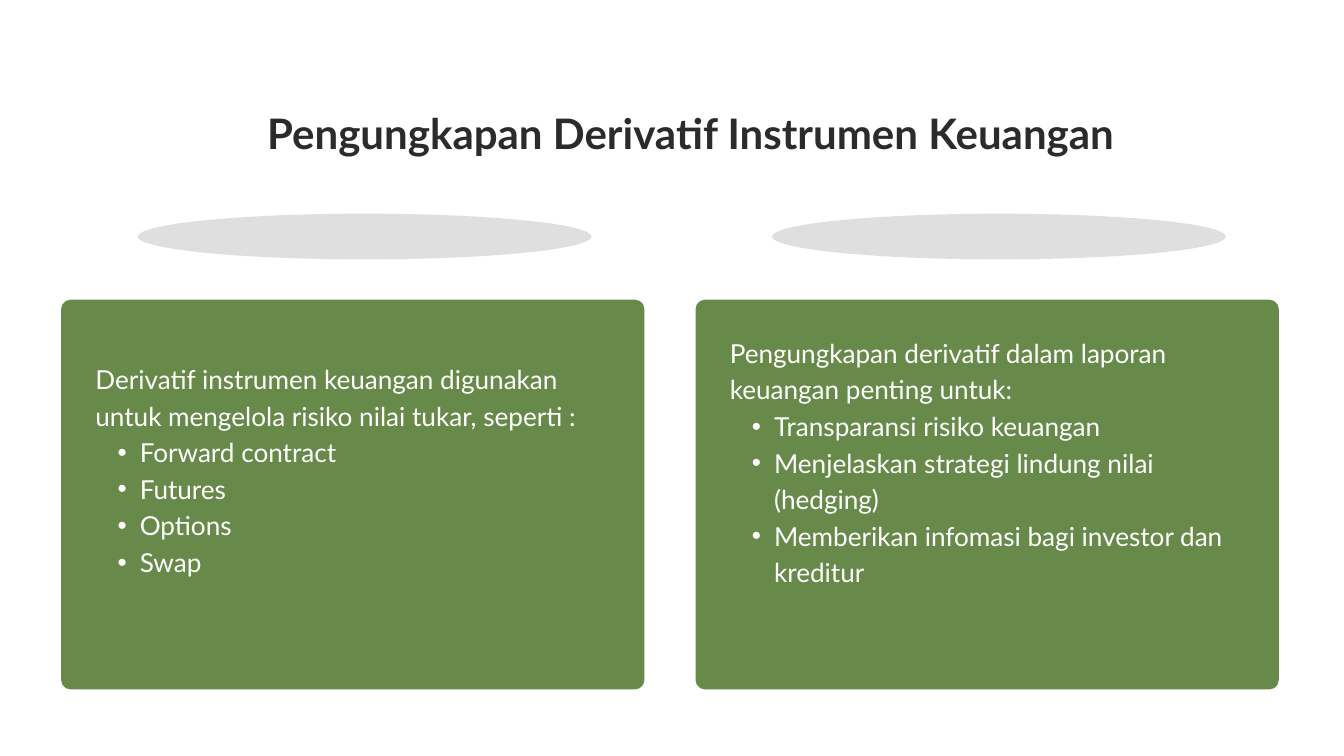
from dataclasses import dataclass

from lxml.etree import SubElement
from pptx import Presentation
from pptx.dml.color import RGBColor
from pptx.enum.shapes import MSO_SHAPE
from pptx.enum.text import MSO_ANCHOR, MSO_AUTO_SIZE, PP_ALIGN
from pptx.oxml.ns import qn
from pptx.util import Inches, Pt


@dataclass(frozen=True)
class Theme:
    ink: RGBColor = RGBColor.from_string("2B2B2B")
    panel: RGBColor = RGBColor.from_string("678949")
    panel_text: RGBColor = RGBColor.from_string("FFFFFF")
    font: str = "Lato"
    title_size: Pt = Pt(45)
    title_leading: Pt = Pt(63)
    body_size: Pt = Pt(28)
    body_leading: Pt = Pt(39.2)
    ellipse_opacity: int = 15


THEME = Theme()
TITLE = "Pengungkapan Derivatif Instrumen Keuangan"
COLUMNS = [
    {
        "text_offset": 0.87,
        "intro": "Derivatif instrumen keuangan digunakan untuk mengelola risiko nilai tukar, seperti :",
        "points": ["Forward contract", "Futures", "Options", "Swap"],
    },
    {
        "text_offset": 0.48,
        "intro": "Pengungkapan derivatif dalam laporan keuangan penting untuk:",
        "points": [
            "Transparansi risiko keuangan",
            "Menjelaskan strategi lindung nilai (hedging)",
            "Memberikan infomasi bagi investor dan kreditur",
        ],
    },
]
TITLE_BOX = (2.91, 1.48, 14.73, 1.88)
COLUMN_BOX = (0.91, 4.46, 8.68, 5.8)
COLUMN_PITCH = 9.44

FRAME_FORMAT = {
    "margin_left": 0,
    "margin_top": 0,
    "margin_right": 0,
    "margin_bottom": 0,
    "word_wrap": True,
    "auto_size": MSO_AUTO_SIZE.NONE,
    "vertical_anchor": MSO_ANCHOR.TOP,
}
TITLE_PARAGRAPH = {
    "alignment": PP_ALIGN.CENTER,
    "line_spacing": THEME.title_leading,
    "space_before": Pt(0),
}
TITLE_FONT = {"name": THEME.font, "size": THEME.title_size, "bold": True}
BODY_PARAGRAPH = {
    "alignment": PP_ALIGN.LEFT,
    "line_spacing": THEME.body_leading,
    "space_before": Pt(0),
}
BODY_FONT = {"name": THEME.font, "size": THEME.body_size, "bold": False}


def apply_format(target, values):
    for attribute, value in values.items():
        setattr(target, attribute, value)


def place(placeholder, box):
    names = ("left", "top", "width", "height")
    apply_format(placeholder, dict(zip(names, map(Inches, box))))
    apply_format(placeholder.text_frame, FRAME_FORMAT)


def write(paragraph, text, paragraph_format, font_format, color):
    run = paragraph.add_run()
    run.text = text
    apply_format(paragraph, paragraph_format)
    apply_format(run.font, font_format)
    run.font.color.rgb = color


def set_bullet(paragraph, indent, hanging, mark=None):
    properties = paragraph._p.get_or_add_pPr()
    properties.set("marL", str(Inches(indent)))
    properties.set("indent", str(Inches(-hanging)))
    if mark:
        SubElement(properties, qn("a:buFont"), typeface="Arial")
        SubElement(properties, qn("a:buChar"), char=mark)
    else:
        SubElement(properties, qn("a:buNone"))


def add_plain_shape(slide, preset, box, color):
    shape = slide.shapes.add_shape(preset, *map(Inches, box))
    shape.shadow.inherit = False
    shape.fill.solid()
    shape.fill.fore_color.rgb = color
    shape.line.fill.background()
    return shape


def add_title(placeholder, box):
    place(placeholder, box)
    write(placeholder.text_frame.paragraphs[0], TITLE, TITLE_PARAGRAPH, TITLE_FONT, THEME.ink)


def add_column(slide, placeholder, box, column):
    left, top, width, height = box
    ellipse = add_plain_shape(
        slide, MSO_SHAPE.OVAL, (left + 1.14, top - 1.28, 6.75, 0.68), THEME.ink
    )
    ink = ellipse.element.spPr.find(qn("a:solidFill"))[0]
    SubElement(ink, qn("a:alpha"), val=str(THEME.ellipse_opacity * 1000))

    panel = add_plain_shape(slide, MSO_SHAPE.ROUNDED_RECTANGLE, box, THEME.panel)
    panel.adjustments[0] = 0.14 / height

    for backdrop in (ellipse, panel):
        placeholder.element.addprevious(backdrop.element)

    place(placeholder, (left + 0.51, top + column["text_offset"], width - 1.03, 3.89))
    frame = placeholder.text_frame
    intro = frame.paragraphs[0]
    set_bullet(intro, 0, 0)
    write(intro, column["intro"], BODY_PARAGRAPH, BODY_FONT, THEME.panel_text)
    for point in column["points"]:
        item = frame.add_paragraph()
        item.level = 1
        set_bullet(item, 0.66, 0.33, "•")
        write(item, point, BODY_PARAGRAPH, BODY_FONT, THEME.panel_text)


def main():
    deck = Presentation()
    deck.slide_width, deck.slide_height = Inches(20), Inches(11.25)
    slide = deck.slides.add_slide(deck.slide_layouts.get_by_name("Two Content"))
    title, *bodies = slide.placeholders
    add_title(title, TITLE_BOX)
    left, *rest = COLUMN_BOX
    for index, (body, column) in enumerate(zip(bodies, COLUMNS)):
        add_column(slide, body, (left + index * COLUMN_PITCH, *rest), column)
    deck.save("out.pptx")


if __name__ == "__main__":
    main()
